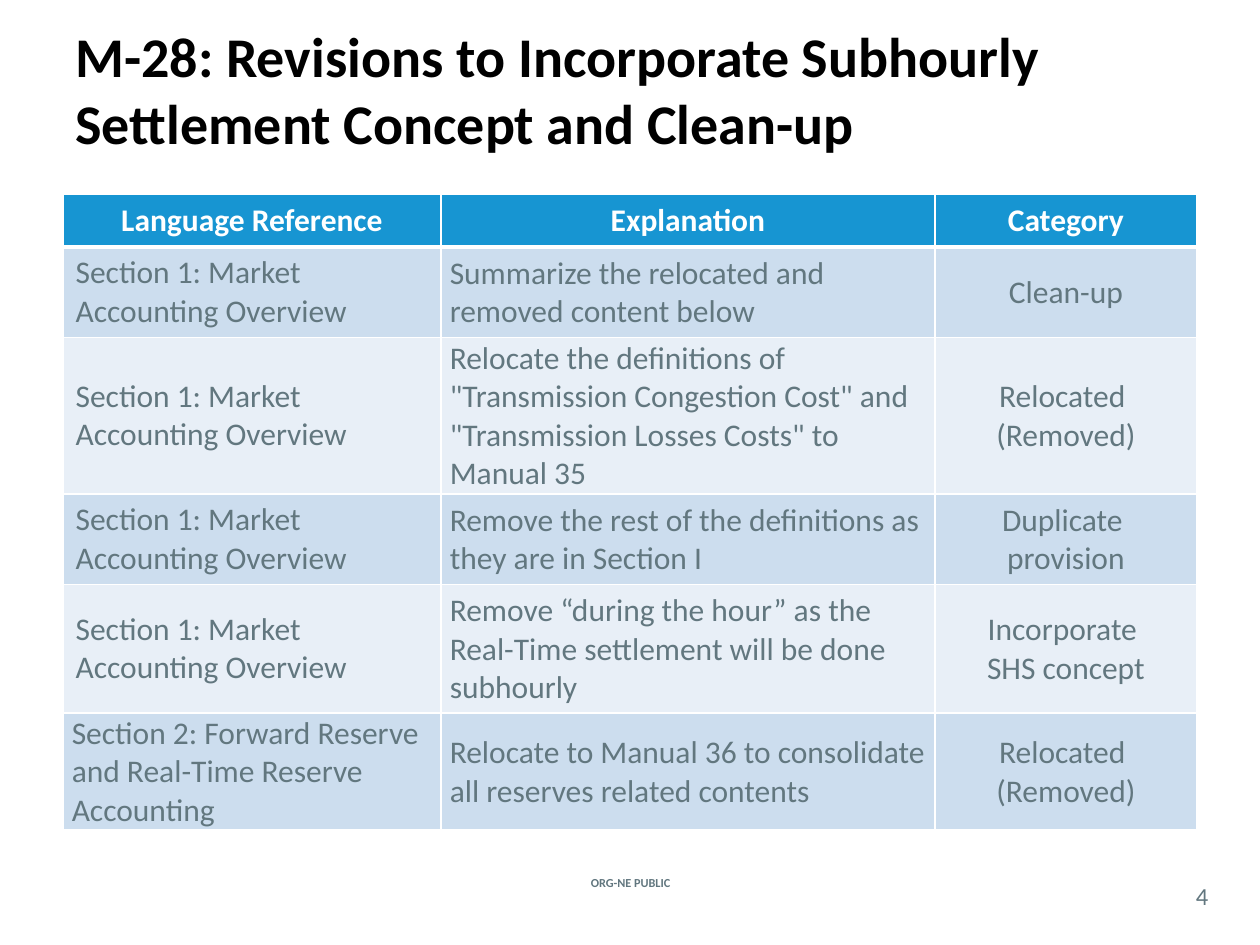
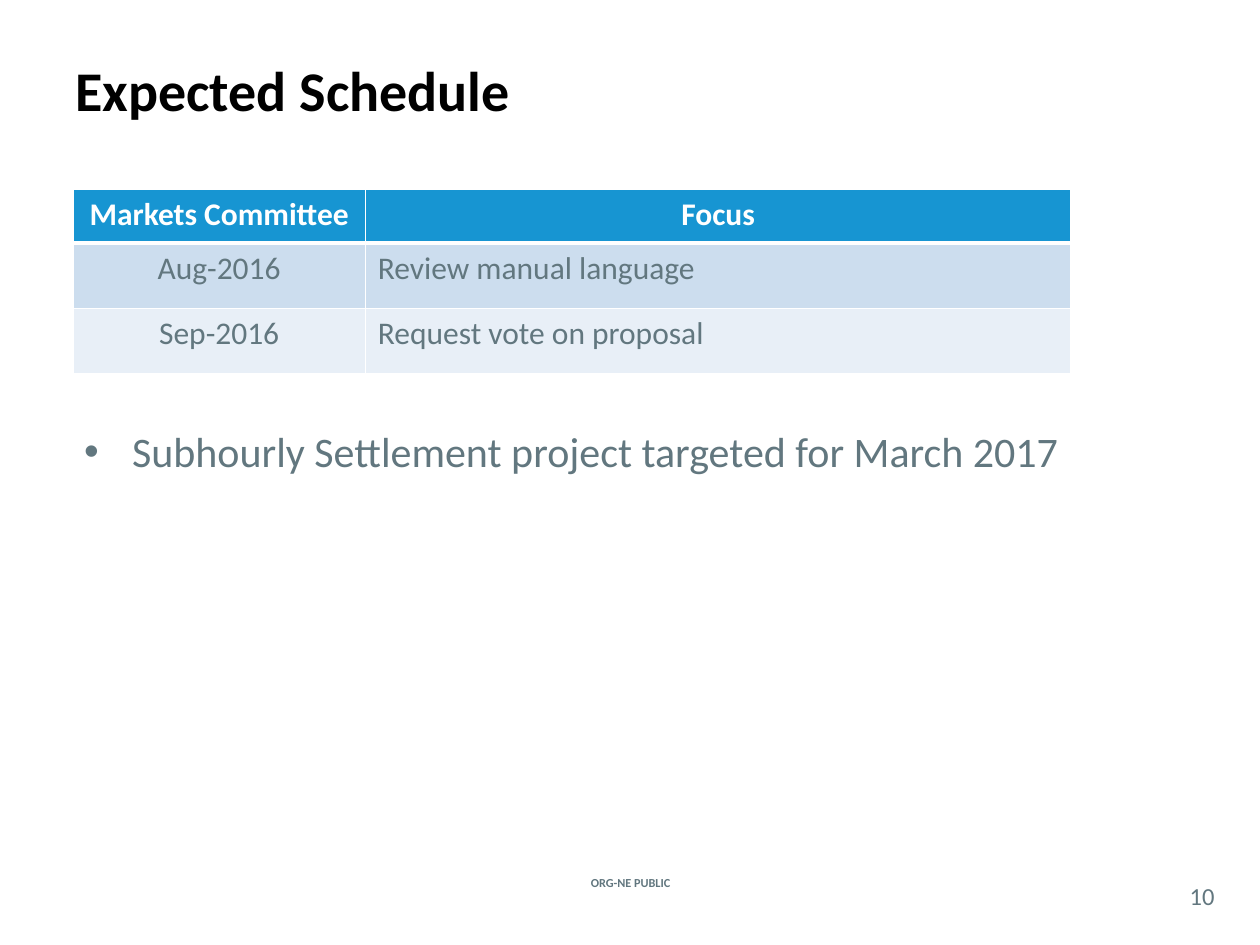
from lxml import etree
from pptx import Presentation
from pptx.dml.color import RGBColor
from pptx.enum.text import MSO_ANCHOR as Anchor, PP_ALIGN as Align
from pptx.oxml.ns import qn
from pptx.util import Inches, Pt

FONT = "Calibri"
BLACK, WHITE, SLATE = "000000", "FFFFFF", "62777F"
HEADER_BLUE = "1795D2"
BANDS = ["CCDDEE", "E8EFF7"]
FOOTER = "ORG-NE PUBLIC"
DEFAULT_INSETS = (0.1, 0.05, 0.1, 0.05)
TIGHT_INSETS = (0.01, 0.01, 0.01, 0)
TIGHT_INDENT = 0.06

OVERVIEW = "Section 1: Market Accounting Overview"
RELOCATED = "Relocated \n(Removed)"

REVISIONS = {
    "title": "M-28: Revisions to Incorporate Subhourly Settlement Concept and Clean-up",
    "number": 4,
    "place": (0.5, 1.54),
    "columns": [3, 3.92, 2.08],
    "heights": [0.42, 0.72, 1.24, 0.72, 1.02, 0.93],
    "anchor": Anchor.MIDDLE,
    "centred": {2},
    "tight": {(row, column) for row in range(1, 6) for column in (1, 2)} | {(5, 0)},
    "rows": [
        ("Language Reference", "Explanation", "Category"),
        (OVERVIEW, "Summarize the relocated and removed content below", "Clean-up"),
        (OVERVIEW,
         'Relocate the definitions of "Transmission Congestion Cost" and '
         '"Transmission Losses Costs" to Manual 35', RELOCATED),
        (OVERVIEW, "Remove the rest of the definitions as they are in Section I",
         "Duplicate \nprovision"),
        (OVERVIEW,
         "Remove “during the hour” as the Real-Time settlement will be done subhourly",
         "Incorporate \nSHS concept"),
        ("Section 2: Forward Reserve and Real-Time Reserve Accounting",
         "Relocate to Manual 36 to consolidate all reserves related contents", RELOCATED),
    ],
}

SCHEDULE = {
    "title": "Expected Schedule",
    "number": 10,
    "place": (0.58, 1.5),
    "columns": [2.32, 5.6],
    "heights": [0.43, 0.52, 0.52],
    "anchor": Anchor.TOP,
    "centred": {0},
    "tight": set(),
    "rows": [
        ("Markets Committee", "Focus"),
        ("Aug-2016", "Review manual language"),
        ("Sep-2016", "Request vote on proposal"),
    ],
    "bullet": "Subhourly Settlement project targeted for March 2017",
}


def rgb(code):
    return RGBColor.from_string(code)


def style(frame, size, colour, bold=False, align=Align.LEFT):
    for paragraph in frame.paragraphs:
        paragraph.alignment = align
        for run in paragraph.runs:
            run.font.name = FONT
            run.font.size = Pt(size)
            run.font.bold = bold
            run.font.color.rgb = rgb(colour)


def set_insets(target, insets):
    target.margin_left, target.margin_top, target.margin_right, target.margin_bottom = map(
        Inches, insets)


def add_text(slide, text, place, size, colour, bold=False, align=Align.LEFT,
             anchor=Anchor.MIDDLE, insets=DEFAULT_INSETS):
    frame = slide.shapes.add_textbox(*map(Inches, place)).text_frame
    frame.word_wrap = True
    frame.vertical_anchor = anchor
    set_insets(frame, insets)
    frame.text = text
    style(frame, size, colour, bold, align)
    return frame


def set_indent(paragraph, left, first=0):
    properties = paragraph._p.get_or_add_pPr()
    properties.set("marL", str(Inches(left)))
    properties.set("indent", str(Inches(first)))
    return properties


def set_borders(cell, top, bottom):
    properties = cell._tc.get_or_add_tcPr()
    widths = {"lnL": 1, "lnR": 1, "lnT": top, "lnB": bottom}
    for position, (side, width) in enumerate(widths.items()):
        line = etree.Element(qn(f"a:{side}"), w=str(Pt(width)))
        fill = etree.SubElement(line, qn("a:solidFill"))
        etree.SubElement(fill, qn("a:srgbClr"), val=WHITE)
        properties.insert(position, line)


def add_table(slide, content):
    rows, columns, heights = content["rows"], content["columns"], content["heights"]
    left, top = content["place"]
    table = slide.shapes.add_table(
        len(rows), len(columns), Inches(left), Inches(top),
        Inches(sum(columns)), Inches(sum(heights))).table
    for column, width in zip(table.columns, columns):
        column.width = Inches(width)
    for row, height in zip(table.rows, heights):
        row.height = Inches(height)

    for r, texts in enumerate(rows):
        header = r == 0
        for c, text in enumerate(texts):
            cell = table.cell(r, c)
            centred = header or c in content["centred"]
            tight = (r, c) in content["tight"]
            cell.text_frame.text = text
            cell.vertical_anchor = content["anchor"]
            set_insets(cell, TIGHT_INSETS if tight else DEFAULT_INSETS)
            style(cell.text_frame, 18, WHITE if header else SLATE, header,
                  Align.CENTER if centred else Align.LEFT)
            if tight and not centred:
                set_indent(cell.text_frame.paragraphs[0], TIGHT_INDENT)
            cell.fill.solid()
            cell.fill.fore_color.rgb = rgb(HEADER_BLUE if header else BANDS[(r - 1) % 2])
            set_borders(cell, top=3 if r == 1 else 1, bottom=3 if header else 1)


def add_bullet(slide, text):
    frame = add_text(slide, text, (0.57, 3.33, 9, 2.92), 24, SLATE, anchor=Anchor.TOP)
    properties = set_indent(frame.paragraphs[0], 0.38, -0.38)
    etree.SubElement(properties, qn("a:buFont"), typeface="Arial")
    etree.SubElement(properties, qn("a:buChar"), char="•")


def build_slide(deck, content):
    slide = deck.slides.add_slide(deck.slide_layouts[6])
    add_text(slide, FOOTER, (4.27, 6.92, 1.47, 0.17), 7, SLATE, True, Align.CENTER)
    add_text(slide, str(content["number"]), (9.33, 6.96, 0.42, 0.29), 14, SLATE,
             align=Align.CENTER, insets=(0, 0, 0, 0))
    add_text(slide, content["title"], (0.5, 0.08, 9, 1.25), 32, BLACK, True)
    add_table(slide, content)
    if "bullet" in content:
        add_bullet(slide, content["bullet"])


def main():
    deck = Presentation()
    deck.slide_width, deck.slide_height = Inches(10), Inches(7.5)
    for content in (REVISIONS, SCHEDULE):
        build_slide(deck, content)
    deck.save("out.pptx")


if __name__ == "__main__":
    main()
